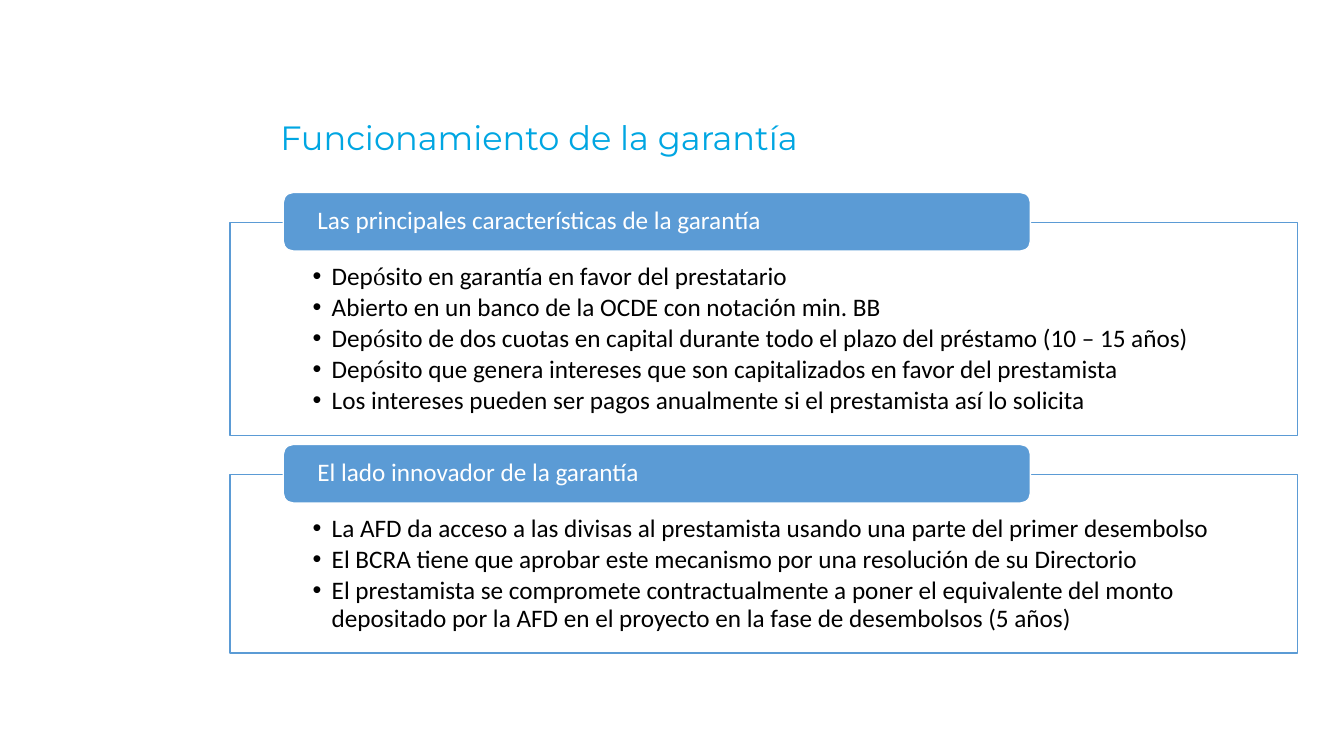
from lxml.etree import SubElement
from pptx import Presentation
from pptx.dml.color import RGBColor
from pptx.enum.shapes import MSO_SHAPE as Shape
from pptx.enum.text import MSO_ANCHOR as Anchor, MSO_AUTO_SIZE as AutoSize, PP_ALIGN as Align
from pptx.oxml.ns import qn
from pptx.util import Inches, Pt

CYAN = RGBColor(0x00, 0xA6, 0xE2)
BLUE = RGBColor(0x5B, 0x9B, 0xD5)
WHITE = RGBColor(0xFF, 0xFF, 0xFF)
BLACK = RGBColor(0x00, 0x00, 0x00)

# Grid: left edge and width of the frames and of the tabs
FRAME_X, FRAME_W = 2.28, 10.59
TAB_X, TAB_W, TAB_H = 2.81, 7.41, 0.58
TAB_RISE = 0.3  # how far a tab stands above its frame

# Heading, top and height of the frame, bullets
SECTIONS = [
    ("Las principales características de la garantía", 2.21, 2.11, [
        "Depósito en garantía en favor del prestatario",
        "Abierto en un banco de la OCDE con notación min. BB",
        "Depósito de dos cuotas en capital durante todo el plazo del préstamo (10 – 15 años)",
        "Depósito que genera intereses que son capitalizados en favor del prestamista",
        "Los intereses pueden ser pagos anualmente si el prestamista así lo solicita",
    ]),
    ("El lado innovador de la garantía", 4.71, 1.77, [
        "La AFD da acceso a las divisas al prestamista usando una parte del primer desembolso",
        "El BCRA tiene que aprobar este mecanismo por una resolución de su Directorio",
        "El prestamista se compromete contractualmente a poner el equivalente del monto "
        "depositado por la AFD en el proyecto en la fase de desembolsos (5 años)",
    ]),
]


def place(sp, x, y, w, h):
    sp.left, sp.top, sp.width, sp.height = (Inches(v) for v in (x, y, w, h))


def paint(sp, fill, line):
    sp.fill.solid()
    sp.fill.fore_color.rgb = fill
    sp.line.color.rgb = line
    sp.line.width = Pt(1)


def set_frame(tf, anchor, left, top, right, bottom):
    tf.word_wrap = True
    tf.auto_size = AutoSize.NONE
    tf.vertical_anchor = anchor
    tf.margin_left, tf.margin_top = Inches(left), Inches(top)
    tf.margin_right, tf.margin_bottom = Inches(right), Inches(bottom)


def style(font, name, size, color):
    font.name, font.size, font.color.rgb = name, Pt(size), color


def add_title(s, text):
    sp = s.shapes.title
    place(sp, 2.68, 1.11, 6.06, 0.5)
    tf = sp.text_frame
    set_frame(tf, Anchor.TOP, 0.1, 0.05, 0.1, 0.05)
    tf.text = text
    p = tf.paragraphs[0]
    p.alignment = Align.LEFT
    style(p.runs[0].font, "Montserrat", 24, CYAN)


def write_bullet(p, text):
    p.level = 1
    p_pr = p._p.get_or_add_pPr()
    p_pr.set("marL", str(Inches(0.19)))
    p_pr.set("indent", str(-Inches(0.19)))
    SubElement(p_pr, qn("a:buFont"), typeface="Arial")
    SubElement(p_pr, qn("a:buChar"), char="•")
    p.alignment = Align.LEFT
    p.line_spacing, p.space_before, p.space_after = 0.9, Pt(0), Pt(2.7)
    # The accented letter of "Depósito" has its own font
    head, accent, tail = text.partition("ó") if text.startswith("Depó") else (text, "", "")
    for part in filter(None, (head, accent, tail)):
        r = p.add_run()
        r.text = part
        style(r.font, "Times New Roman" if part == "ó" else "Calibri", 18, BLACK)


def fill_body(sp, y, h, bullets):
    place(sp, FRAME_X, y, FRAME_W, h)
    paint(sp, WHITE, BLUE)
    tf = sp.text_frame
    set_frame(tf, Anchor.TOP, 0.82, 0.41, 0.82, 0.14)
    for i, text in enumerate(bullets):
        write_bullet(tf.add_paragraph() if i else tf.paragraphs[0], text)


def add_tab(s, y, text):
    sp = s.shapes.add_shape(Shape.ROUNDED_RECTANGLE, Inches(TAB_X), Inches(y),
                            Inches(TAB_W), Inches(TAB_H))
    sp.shadow.inherit = False
    paint(sp, BLUE, WHITE)
    tf = sp.text_frame
    set_frame(tf, Anchor.MIDDLE, 0.31, 0, 0.31, 0)
    tf.text = text
    p = tf.paragraphs[0]
    p.alignment, p.line_spacing = Align.LEFT, 0.9
    style(p.runs[0].font, "Calibri", 18, WHITE)


def main():
    prs = Presentation()
    prs.slide_width, prs.slide_height = Inches(13.33), Inches(7.5)
    s = prs.slides.add_slide(prs.slide_layouts[3])  # title and two bodies

    add_title(s, "Funcionamiento de la garantía")

    # Each section is a framed list with a heading tab on its top edge
    for idx, (heading, y, h, bullets) in enumerate(SECTIONS, start=1):
        fill_body(s.placeholders[idx], y, h, bullets)
        add_tab(s, y - TAB_RISE, heading)

    prs.save("out.pptx")


if __name__ == "__main__":
    main()
